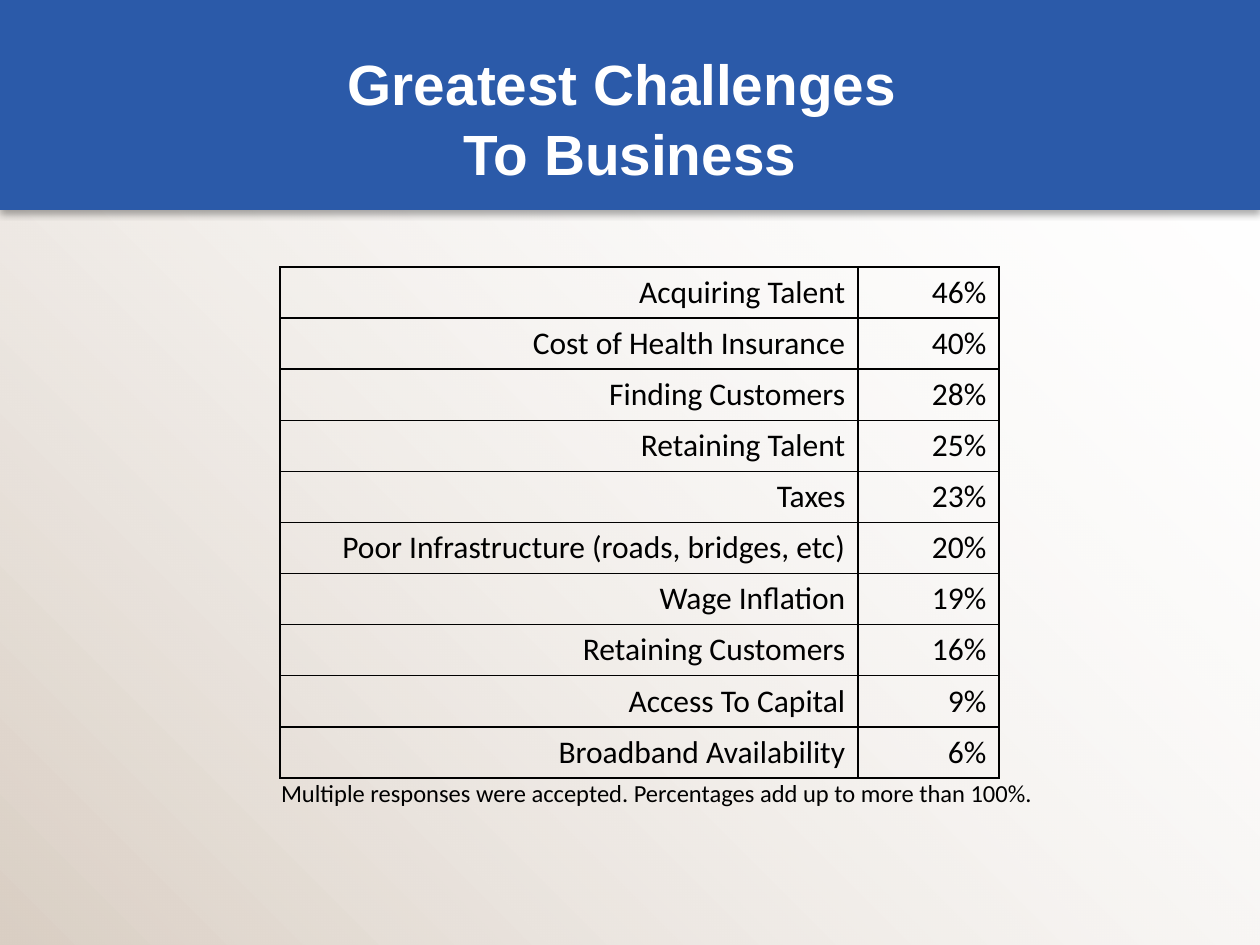
from lxml import etree
from pptx import Presentation
from pptx.dml.color import RGBColor
from pptx.enum.shapes import MSO_SHAPE
from pptx.enum.text import MSO_ANCHOR, MSO_AUTO_SIZE, PP_ALIGN
from pptx.oxml.ns import qn
from pptx.util import Pt

RECT = MSO_SHAPE.RECTANGLE
MIDDLE = MSO_ANCHOR.MIDDLE
CENTER, LEFT, RIGHT = PP_ALIGN.CENTER, PP_ALIGN.LEFT, PP_ALIGN.RIGHT
FIT_SHAPE, NO_FIT = MSO_AUTO_SIZE.SHAPE_TO_FIT_TEXT, MSO_AUTO_SIZE.NONE

SCALE = 914400 / 126
WIDTH, HEIGHT, BAND_HEIGHT = 1260, 945, 210
COLORS = {"sand": "DACFC4", "white": "FFFFFF", "blue": "2B5AA9", "black": "000000"}

TITLE_FONT = {"name": "Arial", "size": Pt(32.4), "bold": True}
TABLE_FONT = {"name": "Calibri", "size": Pt(18), "bold": False}
NOTE_FONT = {"name": "Calibri", "size": Pt(14)}

CHALLENGES = [
    ("Acquiring Talent", "46%"),
    ("Cost of Health Insurance", "40%"),
    ("Finding Customers", "28%"),
    ("Retaining Talent", "25%"),
    ("Taxes", "23%"),
    ("Poor Infrastructure (roads, bridges, etc)", "20%"),
    ("Wage Inflation", "19%"),
    ("Retaining Customers", "16%"),
    ("Access To Capital", "9%"),
    ("Broadband Availability", "6%"),
]
COLUMN_WIDTHS = (578, 141)
ROW_HEIGHT = 51


def px(n):
    return round(n * SCALE)


def rgb(name):
    return RGBColor.from_string(COLORS[name])


def add_xml(parent, tag, **attrs):
    return etree.SubElement(parent, qn(tag), attrs)


def set_attrs(obj, values):
    for name, value in values.items():
        setattr(obj, name, value)


def write(tf, text, font, color, align):
    tf.text = text
    p = tf.paragraphs[0]
    p.alignment = align
    for r in p.runs:
        set_attrs(r.font, font)
        r.font.color.rgb = rgb(color)
    return p


def set_insets(tf):
    set_attrs(tf, dict.fromkeys(
        ("margin_left", "margin_top", "margin_right", "margin_bottom"), px(6)))


def add_rect(s, height):
    sp = s.shapes.add_shape(RECT, 0, 0, px(WIDTH), px(height))
    sp.shadow.inherit = False
    sp.line.fill.background()
    return sp


def add_backdrop(s):
    sp = add_rect(s, HEIGHT)
    sp.fill.gradient()
    sp.fill.gradient_angle = 45
    for stop, color in zip(sp.fill.gradient_stops, ("sand", "white")):
        stop.color.rgb = rgb(color)
    # The white end fades out
    last_color = sp.element.spPr.findall(".//" + qn("a:srgbClr"))[-1]
    add_xml(last_color, "a:alpha", val="0")


def add_band(s):
    sp = add_rect(s, BAND_HEIGHT)
    sp.fill.solid()
    sp.fill.fore_color.rgb = rgb("blue")
    effects = sp.element.spPr.find(qn("a:effectLst"))
    shadow = add_xml(effects, "a:outerShdw", blurRad=str(Pt(4)), dist=str(Pt(2.2)),
                     dir="5400000", rotWithShape="0")
    color = add_xml(shadow, "a:srgbClr", val=COLORS["black"])
    add_xml(color, "a:alpha", val="32000")


def place_title(s, text):
    sp = s.shapes.title
    set_attrs(sp, {"left": px(63), "top": px(38), "width": px(1134), "height": px(157)})
    tf = sp.text_frame
    set_attrs(tf, {"word_wrap": True, "auto_size": NO_FIT, "vertical_anchor": MIDDLE})
    set_insets(tf)
    write(tf, text, TITLE_FONT, "white", CENTER).line_spacing = 1.04
    # Bring the title in front of the band
    sp.element.getparent().append(sp.element)


def set_borders(cell):
    tc_pr = cell._tc.get_or_add_tcPr()
    for side in ("L", "R", "T", "B"):
        ln = add_xml(tc_pr, "a:ln" + side, w=str(Pt(1)))
        fill = add_xml(ln, "a:solidFill")
        add_xml(fill, "a:srgbClr", val=COLORS["black"])


def add_results(s, rows):
    frame = s.shapes.add_table(len(rows), len(COLUMN_WIDTHS), px(280), px(267),
                               px(sum(COLUMN_WIDTHS)), px(ROW_HEIGHT * len(rows)))
    table = frame.table
    set_attrs(table, {"first_row": False, "horz_banding": False})
    for column, width in zip(table.columns, COLUMN_WIDTHS):
        column.width = px(width)
    for i, values in enumerate(rows):
        table.rows[i].height = px(ROW_HEIGHT)
        for j, value in enumerate(values):
            cell = table.cell(i, j)
            write(cell.text_frame, value, TABLE_FONT, "black", RIGHT)
            set_borders(cell)
            cell.fill.background()


def add_note(s, text):
    tf = s.shapes.add_textbox(px(275), px(772), px(774), px(43)).text_frame
    set_attrs(tf, {"word_wrap": True, "auto_size": FIT_SHAPE})
    set_insets(tf)
    write(tf, text, NOTE_FONT, "black", LEFT)


def main():
    prs = Presentation()
    set_attrs(prs, {"slide_width": px(WIDTH), "slide_height": px(HEIGHT)})
    s = prs.slides.add_slide(prs.slide_layouts[5])

    # Background and heading
    add_backdrop(s)
    add_band(s)
    place_title(s, "Greatest Challenges \vTo Business")

    # Survey results
    add_results(s, CHALLENGES)
    add_note(s, "Multiple responses were accepted. Percentages add up to more than 100%.")

    prs.save("out.pptx")


if __name__ == "__main__":
    main()
